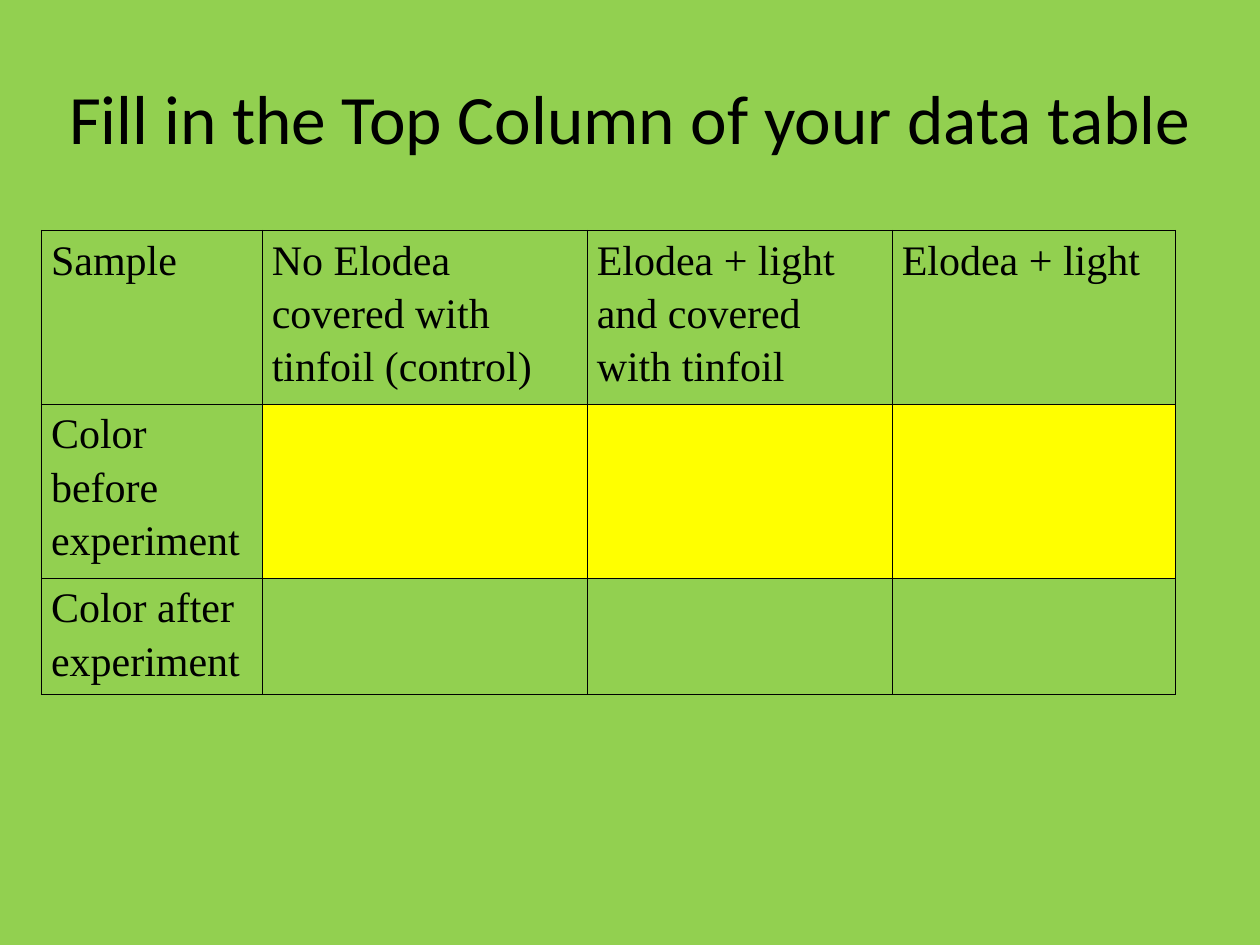
"""Build the Elodea data table slide."""
from lxml.etree import SubElement
from pptx import Presentation
from pptx.dml.color import RGBColor
from pptx.enum.text import MSO_ANCHOR, PP_ALIGN
from pptx.oxml.ns import qn
from pptx.util import Cm, Pt

TITLE = "Fill in the Top Column of your data table"
ROWS = [
    ("Sample", "No Elodea covered with tinfoil (control)",
     "Elodea + light and covered with tinfoil", "Elodea + light"),
    ("Color before experiment", "", "", ""),
    ("Color after experiment", "", "", ""),
]
HIGHLIGHTED_ROW = 1
COLUMN_WIDTHS = [4.45, 6.55, 6.15, 5.71]
ROW_HEIGHTS = [3.22, 3.22, 2.15]
GREEN, YELLOW, BLACK = "92D050", "FFFF00", "000000"
TITLE_FONT = {"name": "Calibri", "size": Pt(39.6), "bold": False}
CELL_FONT = {"name": "Times New Roman", "size": Pt(24), "bold": False}
TITLE_FRAME = {"word_wrap": True, "vertical_anchor": MSO_ANCHOR.MIDDLE}
CELL_FORMAT = {"margin_left": Cm(0.19), "margin_right": Cm(0.19),
               "margin_top": 0, "margin_bottom": 0,
               "vertical_anchor": MSO_ANCHOR.TOP}
TABLE_FORMAT = {"first_row": False, "horz_banding": False}


def color(value):
    return RGBColor.from_string(value)


def apply(target, values):
    for name, value in values.items():
        setattr(target, name, value)


def write(paragraph, text, font, layout):
    apply(paragraph, layout)
    run = paragraph.add_run()
    run.text = text
    apply(run.font, font)
    run.font.color.rgb = color(BLACK)


def add_borders(cell):
    properties = cell._tc.get_or_add_tcPr()
    for side in ("lnL", "lnR", "lnT", "lnB"):
        line = SubElement(properties, qn(f"a:{side}"), w=str(Pt(1)))
        fill = SubElement(line, qn("a:solidFill"))
        SubElement(fill, qn("a:srgbClr"), val=BLACK)


def add_title(slide):
    title = slide.shapes.add_textbox(0, Cm(0.76), Cm(25.4), Cm(3.18))
    apply(title.text_frame, TITLE_FRAME)
    write(title.text_frame.paragraphs[0], TITLE, TITLE_FONT,
          {"alignment": PP_ALIGN.CENTER})


def add_data_table(slide):
    table = slide.shapes.add_table(
        len(ROWS), len(COLUMN_WIDTHS), Cm(0.84), Cm(4.65),
        Cm(sum(COLUMN_WIDTHS)), Cm(sum(ROW_HEIGHTS))).table
    apply(table, TABLE_FORMAT)
    for column, width in zip(table.columns, COLUMN_WIDTHS):
        column.width = Cm(width)
    for row, height in zip(table.rows, ROW_HEIGHTS):
        row.height = Cm(height)
    for row_index, texts in enumerate(ROWS):
        for column_index, text in enumerate(texts):
            cell = table.cell(row_index, column_index)
            apply(cell, CELL_FORMAT)
            add_borders(cell)
            if row_index == HIGHLIGHTED_ROW and not text:
                cell.fill.solid()
                cell.fill.fore_color.rgb = color(YELLOW)
            else:
                cell.fill.background()
            if text:
                write(cell.text_frame.paragraphs[0], text, CELL_FONT,
                      {"line_spacing": 1.15})


def main():
    presentation = Presentation()
    apply(presentation, {"slide_width": Cm(25.4), "slide_height": Cm(19.05)})
    slide = presentation.slides.add_slide(presentation.slide_layouts[6])
    slide.background.fill.solid()
    slide.background.fill.fore_color.rgb = color(GREEN)
    add_title(slide)
    add_data_table(slide)
    presentation.save("out.pptx")


if __name__ == "__main__":
    main()
